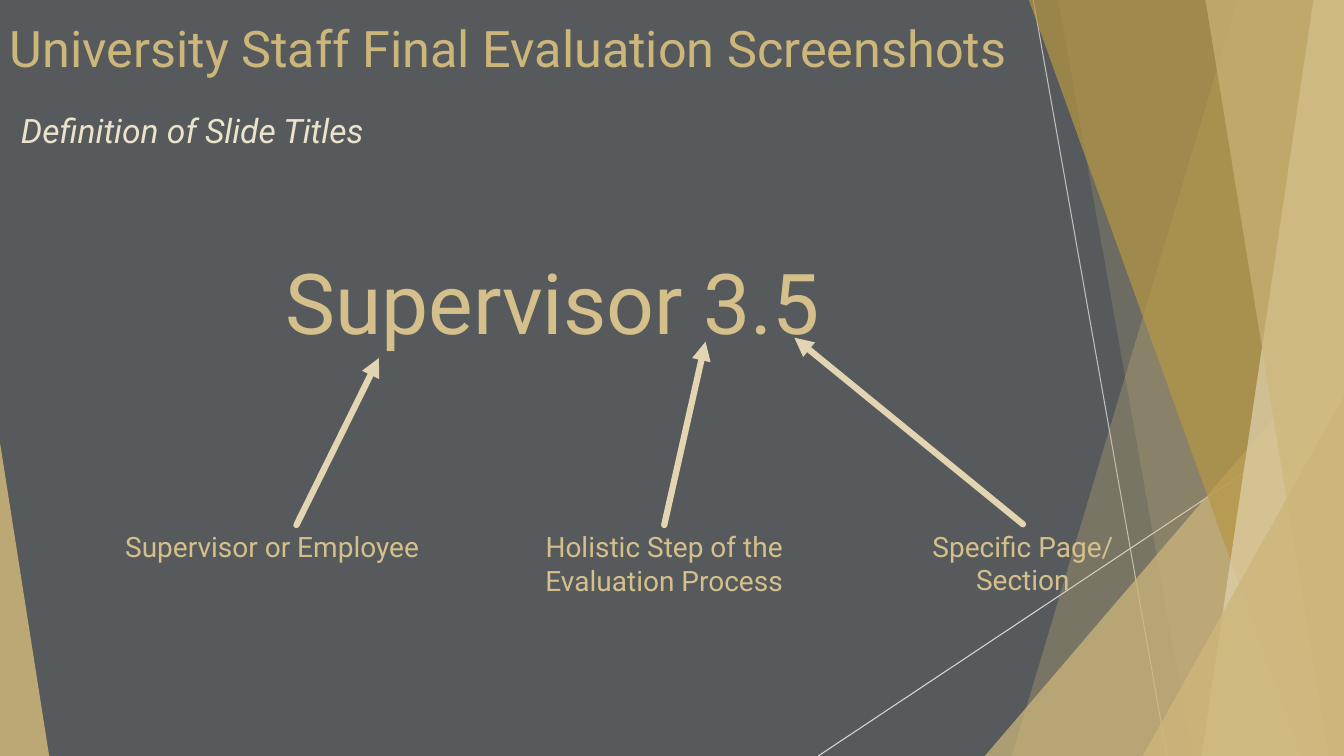
from dataclasses import dataclass

from lxml import etree
from pptx import Presentation
from pptx.dml.color import RGBColor
from pptx.enum import shapes, text
from pptx.oxml import ns
from pptx.util import Cm, Pt

WIDTH, HEIGHT = 33.87, 19.05  # centimetres


@dataclass(frozen=True)
class Theme:
    font: str = "Roboto"
    background: str = "565A5C"
    gold: str = "CDB67A"
    warm_gold: str = "CFB87C"
    dark_gold: str = "B69643"
    pale_gold: str = "E1D3AF"
    cream: str = "ECE3CB"
    label: str = "D5C08B"
    arrow: str = "E3D5B2"
    rule_dark: str = "BFBFBF"
    rule_light: str = "D9D9D9"
    title_size: int = 36
    subtitle_size: int = 24
    example_size: int = 60
    caption_size: int = 20
    rule_width: float = 0.75
    arrow_width: float = 4.5


THEME = Theme()


def paint(shape, color, opacity):
    """Fill a shape with a translucent colour, without outline or shadow."""
    shape.shadow.inherit = False
    shape.line.fill.background()
    shape.fill.solid()
    shape.fill.fore_color.rgb = RGBColor.from_string(color)
    color_node = shape.fill._xPr.find(".//" + ns.qn("a:srgbClr"))
    etree.SubElement(color_node, ns.qn("a:alpha"), val=str(opacity * 1000))


def add_facet(page, top_x, bottom_x, color, opacity):
    """Full-height band from a slanted left edge to the right slide edge."""
    builder = page.shapes.build_freeform(Cm(top_x), 0)
    corners = [(WIDTH, 0), (WIDTH, HEIGHT), (bottom_x, HEIGHT)]
    builder.add_line_segments([(Cm(x), Cm(y)) for x, y in corners], close=True)
    paint(builder.convert_to_shape(), color, opacity)


def add_corner(page, left, top, width, apex, color, opacity):
    """Right triangle standing on the bottom slide edge."""
    shape = page.shapes.add_shape(
        shapes.MSO_SHAPE.ISOSCELES_TRIANGLE,
        Cm(left), Cm(top), Cm(width), Cm(HEIGHT - top))
    shape.adjustments[0] = apex
    paint(shape, color, opacity)


def add_line(page, start, end, color, width, arrow=False):
    points = [Cm(value) for value in (*start, *end)]
    line = page.shapes.add_connector(shapes.MSO_CONNECTOR.STRAIGHT, *points)
    line.line.color.rgb = RGBColor.from_string(color)
    line.line.width = Pt(width)
    properties = line._element.spPr
    if arrow:
        outline = properties.find(ns.qn("a:ln"))
        outline.set("cap", "rnd")
        etree.SubElement(outline, ns.qn("a:tailEnd"), type="triangle")
    etree.SubElement(properties, ns.qn("a:effectLst"))


def add_text(page, words, area, size, color, italic=False, centred=False):
    box = page.shapes.add_textbox(*[Cm(value) for value in area])
    frame = box.text_frame
    frame.word_wrap = True
    para = frame.paragraphs[0]
    para.text = words
    para.alignment = text.PP_ALIGN.CENTER if centred else text.PP_ALIGN.LEFT
    para.font.name = THEME.font
    para.font.size = Pt(size)
    para.font.italic = italic
    para.font.color.rgb = RGBColor.from_string(color)


def add_backdrop(page):
    page.background.fill.solid()
    page.background.fill.fore_color.rgb = RGBColor.from_string(THEME.background)
    add_line(page, (26.04, 0), (29.41, HEIGHT), THEME.rule_dark, THEME.rule_width)
    add_line(page, (WIDTH, 10.24), (20.62, HEIGHT), THEME.rule_light, THEME.rule_width)
    add_facet(page, 31.19, 25.5, THEME.gold, 30)
    add_facet(page, 26.67, 30.05, THEME.gold, 20)
    add_corner(page, 24.82, 8.46, 9.05, 1, THEME.warm_gold, 72)
    add_facet(page, 25.93, 32.79, THEME.dark_gold, 70)
    add_facet(page, 33.1, 30.28, THEME.pale_gold, 70)
    add_facet(page, 30.38, 33.48, THEME.gold, 65)
    add_corner(page, 28.8, 9.98, 5.07, 1, THEME.gold, 80)
    add_corner(page, 0, 11.15, 1.24, 0, THEME.gold, 85)


def add_callout(page, words, left, start, end):
    """Caption whose top is level with the start of its arrow."""
    add_line(page, start, end, THEME.arrow, THEME.arrow_width, arrow=True)
    height = 1.96 if "\n" in words else 1.12
    add_text(page, words, (left, start[1], 13.16, height),
             THEME.caption_size, THEME.label, centred=True)


def main():
    deck = Presentation()
    deck.slide_width, deck.slide_height = Cm(WIDTH), Cm(HEIGHT)
    page = deck.slides.add_slide(deck.slide_layouts[6])
    add_backdrop(page)

    # Headings
    add_text(page, "University Staff Final Evaluation Screenshots",
             (0, 0.3, 31.98, 2.21), THEME.title_size, THEME.gold)
    add_text(page, "Definition of Slide Titles",
             (0.28, 2.64, 11.18, 1.4), THEME.subtitle_size, THEME.cream, italic=True)

    # Example title and the meaning of its parts
    add_text(page, "Supervisor 3.5", (5.16, 6.2, 17.55, 2.82),
             THEME.example_size, THEME.label, centred=True)
    callouts = [
        ("Supervisor or Employee", 0.28, (7.47, 13.23), (9.55, 9.02)),
        ("Holistic Step of the\nEvaluation Process", 10.16, (16.74, 13.23), (17.78, 8.61)),
        ("Specific Page/\nSection", 19.2, (25.78, 13.21), (20.02, 8.51)),
    ]
    for callout in callouts:
        add_callout(page, *callout)

    deck.save("out.pptx")


if __name__ == "__main__":
    main()
